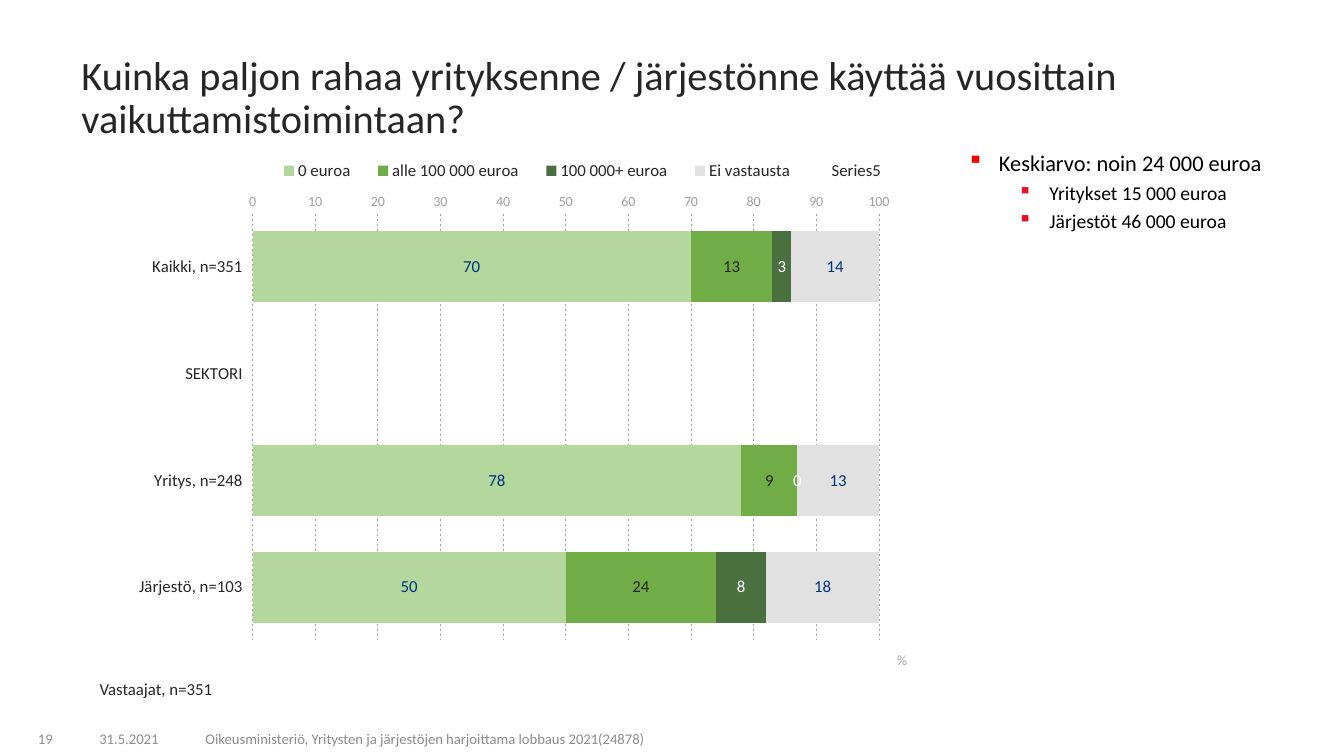
from lxml import etree
from pptx import Presentation
from pptx.chart.data import CategoryChartData
from pptx.dml.color import RGBColor
from pptx.enum.chart import (XL_AXIS_CROSSES, XL_CHART_TYPE, XL_LABEL_POSITION,
                             XL_LEGEND_POSITION, XL_TICK_LABEL_POSITION, XL_TICK_MARK)
from pptx.enum.dml import MSO_LINE
from pptx.enum.text import MSO_ANCHOR, MSO_AUTO_SIZE, PP_ALIGN
from pptx.oxml.ns import qn
from pptx.util import Pt

STACKED = XL_CHART_TYPE.BAR_STACKED
CROSS_MAX = XL_AXIS_CROSSES.MAXIMUM
IN_BASE = XL_LABEL_POSITION.INSIDE_BASE
CENTRE = XL_LABEL_POSITION.CENTER
LEGEND_TOP = XL_LEGEND_POSITION.TOP
LOW = XL_TICK_LABEL_POSITION.LOW
NO_TICK = XL_TICK_MARK.NONE
DASH = MSO_LINE.DASH
TOP, MIDDLE, BOTTOM = MSO_ANCHOR.TOP, MSO_ANCHOR.MIDDLE, MSO_ANCHOR.BOTTOM
NO_FIT = MSO_AUTO_SIZE.NONE
LEFT, MID, RIGHT = PP_ALIGN.LEFT, PP_ALIGN.CENTER, PP_ALIGN.RIGHT

FONT = "Calibri"
HEX = {
    "black": "000000", "dark": "262626", "grey": "8C8C8C", "axis": "A0A0A0",
    "blue": "00337F", "white": "FFFFFF", "red": "FF0000", "crimson": "E60F28",
    "light": "B3D79D", "green": "70AD47", "forest": "4A7040", "pale": "E1E1E1",
}
CATS = ["Kaikki, n=351", "SEKTORI", "Yritys, n=248", "Järjestö, n=103"]
SERIES = [
    ("0 euroa", [70, None, 78, 50], "light", "blue"),
    ("alle 100 000 euroa", [13, None, 9, 24], "green", "dark"),
    ("100 000+ euroa", [3, None, 0, 8], "forest", "white"),
    ("Ei vastausta", [14, None, 13, 18], "pale", "blue"),
    ("Series5", [None] * 4, None, "dark"),
]
POINTS = [
    ("Keskiarvo: noin 24 000 euroa", 0, 16, "red"),
    ("Yritykset 15 000 euroa", 1, 14, "crimson"),
    ("Järjestöt 46 000 euroa", 1, 14, "crimson"),
]
FOOTER = [
    ("19", 2.2, 42.5, RIGHT),
    ("31.5.2021", 47.5, 89.3, MID),
    ("Oikeusministeriö, Yritysten ja järjestöjen harjoittama lobbaus 2021(24878)",
     139.7, 426.2, LEFT),
]


def rgb(name):
    return RGBColor.from_string(HEX[name])


def style(font, size, color):
    font.name = FONT
    font.size = Pt(size)
    font.color.rgb = rgb(color)


def add_text(slide, box, text, size, color, align=LEFT, anchor=TOP):
    frame = slide.shapes.add_textbox(*map(Pt, box)).text_frame
    frame.word_wrap = True
    frame.vertical_anchor = anchor
    frame.text = text
    para = frame.paragraphs[0]
    para.alignment = align
    para.line_spacing = 0.9 if anchor == TOP else 1.0
    style(para.runs[0].font, size, color)


def add_title(slide, box):
    title = slide.shapes.title
    title.left, title.top, title.width, title.height = map(Pt, box)
    frame = title.text_frame
    frame.text = ("Kuinka paljon rahaa yrityksenne / järjestönne käyttää "
                  "vuosittain vaikuttamistoimintaan?")
    frame.word_wrap = True
    frame.auto_size = NO_FIT
    frame.vertical_anchor = MIDDLE
    para = frame.paragraphs[0]
    para.alignment = LEFT
    para.line_spacing = 0.9
    style(para.runs[0].font, 28.8, "dark")


def add_bullet(para, level, color):
    props = para._p.get_or_add_pPr()
    props.set("marL", str(Pt(22.5 + 36 * level)))
    props.set("indent", str(Pt(-22.5)))
    paint = etree.SubElement(props, qn("a:buClr"))
    etree.SubElement(paint, qn("a:srgbClr"), val=HEX[color])
    etree.SubElement(props, qn("a:buChar"), char="▪")


def add_points(slide, box):
    frame = slide.shapes.add_textbox(*map(Pt, box)).text_frame
    frame.word_wrap = True
    for i, (text, level, size, color) in enumerate(POINTS):
        para = frame.add_paragraph() if i else frame.paragraphs[0]
        para.text = text
        para.level = level
        add_bullet(para, level, color)
        para.line_spacing = 0.9
        para.space_before = Pt(5 if i else 0)
        style(para.runs[0].font, size, "black")


def set_layout(parent, index, inner=False, **sizes):
    old = parent.find(qn("c:layout"))
    if old is not None:
        parent.remove(old)
    layout = etree.Element(qn("c:layout"))
    manual = etree.SubElement(layout, qn("c:manualLayout"))
    if inner:
        etree.SubElement(manual, qn("c:layoutTarget"), val="inner")
    for key in "xy":
        etree.SubElement(manual, qn(f"c:{key}Mode"), val="edge")
    for key, size in sizes.items():
        etree.SubElement(manual, qn(f"c:{key}"), val=str(size))
    parent.insert(index, layout)


def style_axes(chart):
    cat, val = chart.category_axis, chart.value_axis
    for axis, size, color in ((cat, 12, "dark"), (val, 10, "axis")):
        axis.major_tick_mark = axis.minor_tick_mark = NO_TICK
        axis.format.line.fill.background()
        style(axis.tick_labels.font, size, color)
    cat.reverse_order = True
    cat.crosses = CROSS_MAX
    cat.tick_label_position = LOW
    val.minimum_scale, val.maximum_scale, val.major_unit = 0, 100.01, 10
    val.tick_labels.number_format = "General"
    val.tick_labels.number_format_is_linked = False
    val.has_major_gridlines = True
    grid = val.major_gridlines.format.line
    grid.color.rgb = rgb("axis")
    grid.width = Pt(0.5)
    grid.dash_style = DASH
    title = val.axis_title
    title.text_frame.text = "%"
    run = title.text_frame.paragraphs[0].runs[0]
    style(run.font, 10, "axis")
    run.font.bold = False
    set_layout(title._element, 1, x=0.95, y=0.95)


def style_bars(chart):
    plot = chart.plots[0]
    plot.gap_width, plot.overlap = 50, 100
    plot.vary_by_categories = False
    for bar, (_, _, fill, ink) in zip(plot.series, SERIES):
        if fill:
            bar.format.fill.solid()
            bar.format.fill.fore_color.rgb = rgb(fill)
        else:
            bar.format.fill.background()
        labels = bar.data_labels
        labels.show_value = True
        labels.number_format = "#,##0"
        labels.number_format_is_linked = False
        labels.position = CENTRE if fill else IN_BASE
        style(labels.font, 12, ink)


def add_bars(slide, box):
    data = CategoryChartData()
    data.categories = CATS
    for name, values, _, _ in SERIES:
        data.add_series(name, values)
    chart = slide.shapes.add_chart(STACKED, *map(Pt, box), data).chart
    style(chart.font, 12, "black")
    chart.has_title = False
    chart.has_legend = True
    legend = chart.legend
    legend.position = LEGEND_TOP
    legend.include_in_layout = False
    style(legend.font, 12, "dark")
    set_layout(legend._element, 1, x=0.22, y=0.02, w=0.74, h=0.05)
    area = chart._chartSpace.chart.plotArea
    set_layout(area, 0, True, x=0.209, y=0.126, w=0.723, h=0.808)
    style_axes(chart)
    style_bars(chart)


def add_footer(slide, top, height):
    for text, left, width, align in FOOTER:
        add_text(slide, (left, top, width, height), text, 10.5, "grey", align, BOTTOM)


def main():
    deck = Presentation()
    deck.slide_width, deck.slide_height = Pt(960), Pt(540)
    slide = deck.slides.add_slide(deck.slide_layouts[5])
    add_title(slide, (51, 46, 869, 49))
    add_points(slide, (684, 105, 236, 401))
    add_bars(slide, (51, 105, 619, 377.5))
    add_text(slide, (64, 482.5, 661, 20), "Vastaajat, n=351", 12, "dark")
    add_footer(slide, 515.5, 21.6)
    deck.save("out.pptx")


if __name__ == "__main__":
    main()
